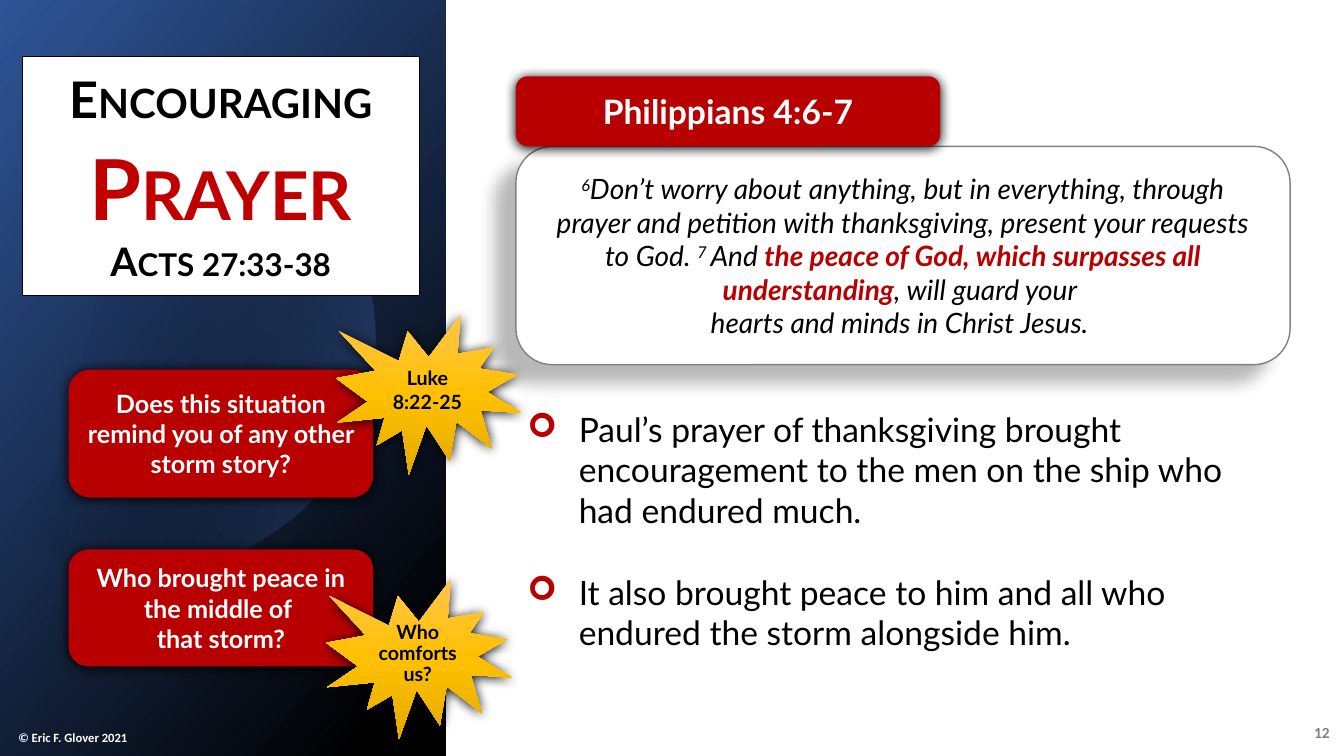
from dataclasses import dataclass

from lxml import etree
from pptx import Presentation
from pptx import util as u
from pptx.dml.color import RGBColor
from pptx.enum import shapes, text
from pptx.oxml import parse_xml
from pptx.oxml.ns import nsdecls, qn

Pt = u.Pt
Shape = shapes.MSO_SHAPE
Align = text.PP_ALIGN
Anchor = text.MSO_ANCHOR


@dataclass(frozen=True)
class Theme:
    white: str = "FFFFFF"
    black: str = "000000"
    red: str = "B90000"
    title_red: str = "C00000"
    gray: str = "808080"
    font: str = "Lato"
    small_font: str = "Calibri"
    # Gradient stops: position %, colour, opacity %
    panel: tuple = ((8, "000000", 100), (100, "2F5597", 100))
    glow: tuple = ((29, "000000", 0), (100, "4472C4", 43))
    gold: tuple = ((0, "FFC64B", 100), (50, "FFC000", 100), (100, "E3AB00", 100))
    # Shadows: opacity %, blur, distance, direction
    tight_shadow: tuple = (100, 8.5, 1, 90)
    wide_shadow: tuple = (28, 11.8, 19.7, 141)


THEME = Theme()


@dataclass(frozen=True)
class Span:
    words: str
    size: float
    color: str = THEME.black
    bold: bool = False
    italic: bool = False
    raised: bool = False
    small_caps: bool = False
    font: str = THEME.font


@dataclass(frozen=True)
class Box:
    left: float
    top: float
    width: float
    height: float

    def lengths(self) -> tuple:
        return Pt(self.left), Pt(self.top), Pt(self.width), Pt(self.height)


@dataclass(frozen=True)
class Callout:
    """A filled shape with one centred paragraph."""
    kind: Shape
    box: Box
    spans: tuple
    fill: object
    shadow: tuple
    line: str = ""
    inset: tuple = (7.2, 0)
    before: float = 0
    after: float = 0
    spacing: float = 1.0


def paint(shape, fill, angle: float = 90) -> None:
    """Fill with a colour, or with gradient stops at a clockwise angle."""
    if isinstance(fill, str):
        shape.fill.solid()
        shape.fill.fore_color.rgb = RGBColor.from_string(fill)
        return
    shape.fill.background()
    stops = "".join(
        f'<a:gs pos="{pos * 1000}"><a:srgbClr val="{color}">'
        f'<a:alpha val="{alpha * 1000}"/></a:srgbClr></a:gs>'
        for pos, color, alpha in fill)
    gradient = parse_xml(
        f'<a:gradFill {nsdecls("a")} rotWithShape="1"><a:gsLst>{stops}</a:gsLst>'
        f'<a:lin ang="{int(angle * 60000)}" scaled="0"/></a:gradFill>')
    props = shape._element.spPr
    props.replace(props.find(qn("a:noFill")), gradient)


def outline(shape, color: str = "", width: float = 1) -> None:
    if not color:
        shape.line.fill.background()
        return
    shape.line.color.rgb = RGBColor.from_string(color)
    shape.line.width = Pt(width)


def cast_shadow(shape, shadow: tuple = ()) -> None:
    shape.shadow.inherit = False
    if shadow:
        alpha, blur, distance, direction = shadow
        shape._element.spPr.find(qn("a:effectLst")).append(parse_xml(
            f'<a:outerShdw {nsdecls("a")} blurRad="{Pt(blur)}" dist="{Pt(distance)}" '
            f'dir="{direction * 60000}" algn="ctr" rotWithShape="0">'
            f'<a:srgbClr val="{THEME.black}"><a:alpha val="{alpha * 1000}"/>'
            f'</a:srgbClr></a:outerShdw>'))


def setup(frame, anchor: Anchor, inset: tuple = (7.2, 3.6)) -> None:
    frame.word_wrap = True
    frame.auto_size = text.MSO_AUTO_SIZE.NONE
    frame.vertical_anchor = anchor
    frame.margin_left = frame.margin_right = Pt(inset[0])
    frame.margin_top = frame.margin_bottom = Pt(inset[1])


def write(paragraph, spans, align: Align, before: float = 0, after: float = 0,
          spacing: float = 1.0) -> None:
    paragraph.alignment = align
    paragraph.line_spacing = spacing
    paragraph.space_before, paragraph.space_after = Pt(before), Pt(after)
    for span in spans:
        for number, words in enumerate(span.words.split("\n")):
            if number:
                paragraph.add_line_break()
            if not words:
                continue
            run = paragraph.add_run()
            run.text = words
            font = run.font
            font.name, font.size = span.font, Pt(span.size)
            font.bold, font.italic = span.bold, span.italic
            font.color.rgb = RGBColor.from_string(span.color)
            if span.raised:
                font._element.set("baseline", "30000")
            if span.small_caps:
                font._element.set("cap", "small")


def add_callout(slide, callout: Callout) -> None:
    shape = slide.shapes.add_shape(callout.kind, *callout.box.lengths())
    paint(shape, callout.fill)
    outline(shape, callout.line)
    cast_shadow(shape, callout.shadow)
    setup(shape.text_frame, Anchor.MIDDLE, callout.inset)
    write(shape.text_frame.paragraphs[0], callout.spans, Align.CENTER,
          callout.before, callout.after, callout.spacing)


def add_label(slide, box: Box, span: Span, anchor: Anchor, align: Align) -> None:
    frame = slide.shapes.add_textbox(*box.lengths()).text_frame
    setup(frame, anchor)
    write(frame.paragraphs[0], [span], align)


def bring_forward(slide, placeholder, box: Box) -> None:
    slide.shapes._spTree.append(placeholder._element)
    placeholder.left, placeholder.top, placeholder.width, placeholder.height = box.lengths()


def curve(start: tuple, pull_a: tuple, pull_b: tuple, end: tuple, steps: int = 24) -> list:
    """Points along a cubic curve, kept inside the slide's left edge."""
    points = []
    for step in range(1, steps + 1):
        t = step / steps
        weights = ((1 - t) ** 3, 3 * t * (1 - t) ** 2, 3 * t * t * (1 - t), t ** 3)
        x, y = (sum(w * p[axis] for w, p in zip(weights, (start, pull_a, pull_b, end)))
                for axis in (0, 1))
        points.append((Pt(max(0, x)), Pt(y)))
    return points


def add_backdrop(slide) -> None:
    panel = slide.shapes.add_shape(Shape.RECTANGLE, *Box(0, 0, 318.5, 540).lengths())
    paint(panel, THEME.panel, 220)
    top, right, bottom = (107.3, 79.2), (261.4, 198), (149, 401.8)
    low_edge, high_edge, shoulder = (0, 371), (0, 115.9), (57.6, 85.7)
    rim = (curve(top, (177.1, 80.6), (241.2, 127.4), right)
           + curve(right, (286.6, 285.8), (236.2, 376.6), bottom)
           + curve(bottom, (94.3, 417.6), (38.2, 403.9), low_edge)
           + [(Pt(0), Pt(high_edge[1]))]
           + curve(high_edge, (16.6, 103), (36, 92.9), shoulder)
           + curve(shoulder, (74.2, 81.4), (90.7, 79.2), top))
    builder = slide.shapes.build_freeform(Pt(top[0]), Pt(top[1]))
    builder.add_line_segments(rim, close=True)
    glow = builder.convert_to_shape()
    paint(glow, THEME.glow, 14)
    for shape in (panel, glow):
        outline(shape)
        cast_shadow(shape)


def fill_title(slide) -> None:
    title = slide.shapes.title
    bring_forward(slide, title, Box(16, 40.5, 283.5, 170.5))
    title._element.spPr.insert(1, parse_xml(
        f'<a:prstGeom {nsdecls("a")} prst="roundRect"><a:avLst/></a:prstGeom>'))
    paint(title, THEME.white)
    outline(title, THEME.black, 0.75)
    frame = title.text_frame
    setup(frame, Anchor.MIDDLE, (0, 0))
    write(frame.paragraphs[0], [Span("Encouraging", 36, bold=True, small_caps=True)],
          Align.CENTER, after=6)
    write(frame.add_paragraph(),
          [Span("Prayer\n", 60, THEME.title_red, bold=True, small_caps=True),
           Span("Acts 27:33-38", 28, bold=True, small_caps=True)],
          Align.CENTER, after=6)


def fill_points(slide, points: tuple) -> None:
    body = slide.placeholders[1]
    bring_forward(slide, body, Box(369.5, 288.5, 553, 183))
    frame = body.text_frame
    setup(frame, Anchor.TOP)
    for number, point in enumerate(points):
        paragraph = frame.add_paragraph() if number else frame.paragraphs[0]
        write(paragraph, [Span(point, 24)], Align.LEFT, after=30)
        props = paragraph._p.get_or_add_pPr()
        props.set("marL", str(Pt(36.7)))
        props.set("indent", str(-Pt(36.7)))
        color = etree.SubElement(props, qn("a:buClr"))
        etree.SubElement(color, qn("a:srgbClr"), val=THEME.red)
        etree.SubElement(props, qn("a:buFont"), typeface="Wingdings")
        etree.SubElement(props, qn("a:buChar"), char="➢")


def red_card(box: Box, words: str, size: float) -> Callout:
    return Callout(Shape.ROUNDED_RECTANGLE, box, (Span(words, size, THEME.white, bold=True),),
                   THEME.red, THEME.tight_shadow, after=12)


def gold_burst(left: float, top: float, words: str, **spacing: float) -> Callout:
    return Callout(Shape.EXPLOSION1, Box(left, top, 132.5, 114.5),
                   (Span(words, 14, bold=True),), THEME.gold, THEME.tight_shadow,
                   inset=(7.2, 3.6), **spacing)


SCRIPTURE = Callout(
    Shape.ROUNDED_RECTANGLE, Box(368.5, 104.5, 553, 156),
    (Span("6", 20, italic=True, raised=True),
     Span("Don’t worry about anything, but in everything, through prayer and petition "
          "with thanksgiving, present your requests to God. ", 20, italic=True),
     Span("7 ", 20, italic=True, raised=True),
     Span("And ", 20, italic=True),
     Span("the peace of God, which surpasses all understanding", 20, THEME.red, True, True),
     Span(", will guard your \nhearts and minds in Christ Jesus. ", 20, italic=True)),
    THEME.white, THEME.wide_shadow, line=THEME.gray, inset=(14.4, 0), before=6)
REFERENCE = red_card(Box(368.5, 54.5, 303, 50), "Philippians 4:6-7", 24)
QUESTIONS = (
    red_card(Box(49, 264, 217.5, 91.5),
             "Does this situation remind you of any other storm story?", 18),
    red_card(Box(49, 392.5, 217.5, 83.5),
             "Who brought peace in the middle of \nthat storm?", 18),
    gold_burst(240, 224.5, "Luke 8:22-25"),
    gold_burst(233, 413.5, "Who comforts us?", before=6, spacing=0.9))
POINTS = (
    "Paul’s prayer of thanksgiving brought encouragement to the men on the ship "
    "who had endured much.",
    "It also brought peace to him and all who endured the storm alongside him.")


def main() -> None:
    deck = Presentation()
    deck.slide_width, deck.slide_height = Pt(960), Pt(540)
    slide = deck.slides.add_slide(deck.slide_layouts[1])

    # Left panel, credit and page number
    add_backdrop(slide)
    add_label(slide, Box(6, 516, 113, 20),
              Span("© Eric F. Glover 2021", 9, THEME.white, bold=True, font=THEME.small_font),
              Anchor.BOTTOM, Align.LEFT)
    add_label(slide, Box(921.5, 508.5, 35.5, 29),
              Span("12", 11, THEME.gray, bold=True, font=THEME.small_font),
              Anchor.MIDDLE, Align.RIGHT)

    # Scripture, title and teaching points
    for callout in (SCRIPTURE, REFERENCE):
        add_callout(slide, callout)
    fill_title(slide)
    fill_points(slide, POINTS)

    # Discussion questions with their bursts
    for callout in QUESTIONS:
        add_callout(slide, callout)

    deck.save("out.pptx")


if __name__ == "__main__":
    main()
